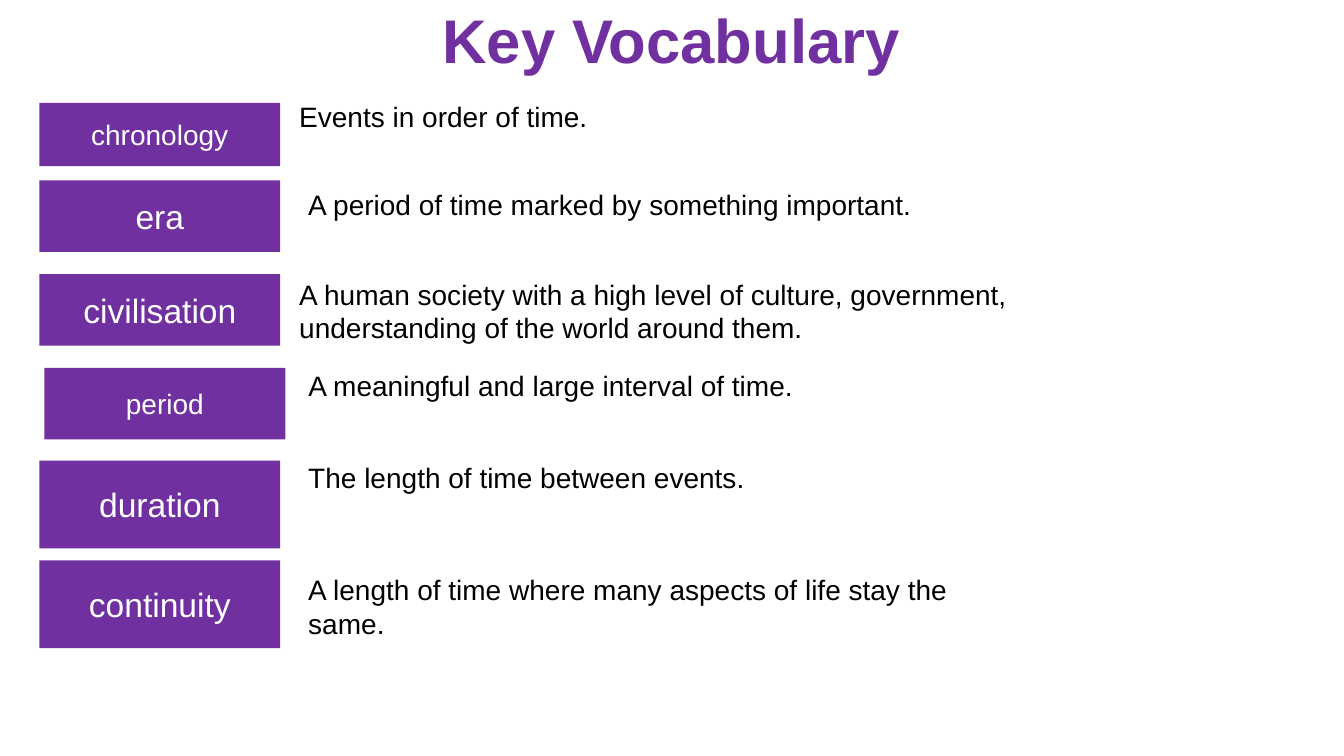
import pptx
import pptx.dml.color
import pptx.enum.shapes
import pptx.enum.text
import pptx.util

PURPLE = pptx.dml.color.RGBColor(0x70, 0x30, 0xA0)
WHITE = pptx.dml.color.RGBColor(0xFF, 0xFF, 0xFF)
BLACK = pptx.dml.color.RGBColor(0x00, 0x00, 0x00)
ALIGN = pptx.enum.text.PP_ALIGN
ANCHOR = pptx.enum.text.MSO_ANCHOR

GRID_CELL = 0.1
TERM_WIDTH = 23.9
TERM_LEFT, TERM_LEFT_INDENTED = 3.9, 4.4
DEFINITION_LEFT, DEFINITION_LEFT_INDENTED = 28.7, 29.6
DEFINITION_HEIGHT = 7.7

TERMS = [
    ("chronology", TERM_LEFT, 10.2, 6.3, 20),
    ("era", TERM_LEFT, 17.9, 7.1, 24),
    ("civilisation", TERM_LEFT, 27.2, 7.1, 24),
    ("period", TERM_LEFT_INDENTED, 36.5, 7.1, 20),
    ("duration", TERM_LEFT, 45.7, 8.7, 24),
    ("continuity", TERM_LEFT, 55.6, 8.7, 24),
]
DEFINITIONS = [
    ("Events in order of time.", DEFINITION_LEFT, 9.4, 102.3, DEFINITION_HEIGHT),
    ("A period of time marked by something important.",
     DEFINITION_LEFT_INDENTED, 18.1, 94.4, DEFINITION_HEIGHT),
    ("A human society with a high level of culture, government, "
     "understanding of the world around them.",
     DEFINITION_LEFT, 27, 89.5, DEFINITION_HEIGHT),
    ("A meaningful and large interval of time.",
     DEFINITION_LEFT_INDENTED, 36.1, 101.5, DEFINITION_HEIGHT),
    ("The length of time between events.",
     DEFINITION_LEFT_INDENTED, 45.2, 69.3, 4.4),
]
CLOSING_DEFINITION = (
    "A length of time where many aspects of life stay the same.",
    DEFINITION_LEFT_INDENTED, 56.3, 69.3, DEFINITION_HEIGHT)


def grid(*cells):
    return [pptx.util.Inches(cell * GRID_CELL) for cell in cells]


def write_text(shape, text, *, size, color, font="Arial", bold=False,
               align=ALIGN.LEFT, anchor=ANCHOR.TOP):
    frame = shape.text_frame
    frame.word_wrap = True
    frame.auto_size = pptx.enum.text.MSO_AUTO_SIZE.NONE
    frame.vertical_anchor = anchor
    paragraph = frame.paragraphs[0]
    paragraph.alignment = align
    run = paragraph.add_run()
    run.text = text
    run.font.name = font
    run.font.size = pptx.util.Pt(size)
    run.font.bold = bold
    run.font.color.rgb = color


class VocabularySlide:
    def __init__(self, presentation):
        self.slide = presentation.slides.add_slide(presentation.slide_layouts[5])
        self.centred = {"align": ALIGN.CENTER, "anchor": ANCHOR.MIDDLE}
        self.body = {"size": 20, "color": BLACK}

    def title(self, text, left, top, width, height):
        shape = self.slide.shapes.title
        shape.left, shape.top, shape.width, shape.height = grid(left, top, width, height)
        write_text(shape, text, size=44, color=PURPLE, bold=True, **self.centred)

    def box(self, left, top, width, height, fill):
        shape = self.slide.shapes.add_shape(
            pptx.enum.shapes.MSO_SHAPE.RECTANGLE, *grid(left, top, width, height))
        shape.shadow.inherit = False
        shape.fill.solid()
        shape.fill.fore_color.rgb = fill
        shape.line.fill.background()
        return shape

    def term(self, text, left, top, height, size):
        shape = self.box(left, top, TERM_WIDTH, height, PURPLE)
        write_text(shape, text, size=size, color=WHITE, **self.centred)

    def definition(self, text, left, top, width, height):
        write_text(self.box(left, top, width, height, WHITE), text, **self.body)

    def note(self, text, left, top, width, height):
        shape = self.slide.shapes.add_textbox(*grid(left, top, width, height))
        write_text(shape, text, **self.body)


def main():
    presentation = pptx.Presentation()
    presentation.slide_width, presentation.slide_height = grid(133.33, 75)
    vocabulary = VocabularySlide(presentation)
    vocabulary.title("Key Vocabulary", 25.3, -2.4, 82.6, 12.6)
    for term in TERMS:
        vocabulary.term(*term)
    for definition in DEFINITIONS:
        vocabulary.definition(*definition)
    vocabulary.note(*CLOSING_DEFINITION)
    presentation.save("out.pptx")


if __name__ == "__main__":
    main()
